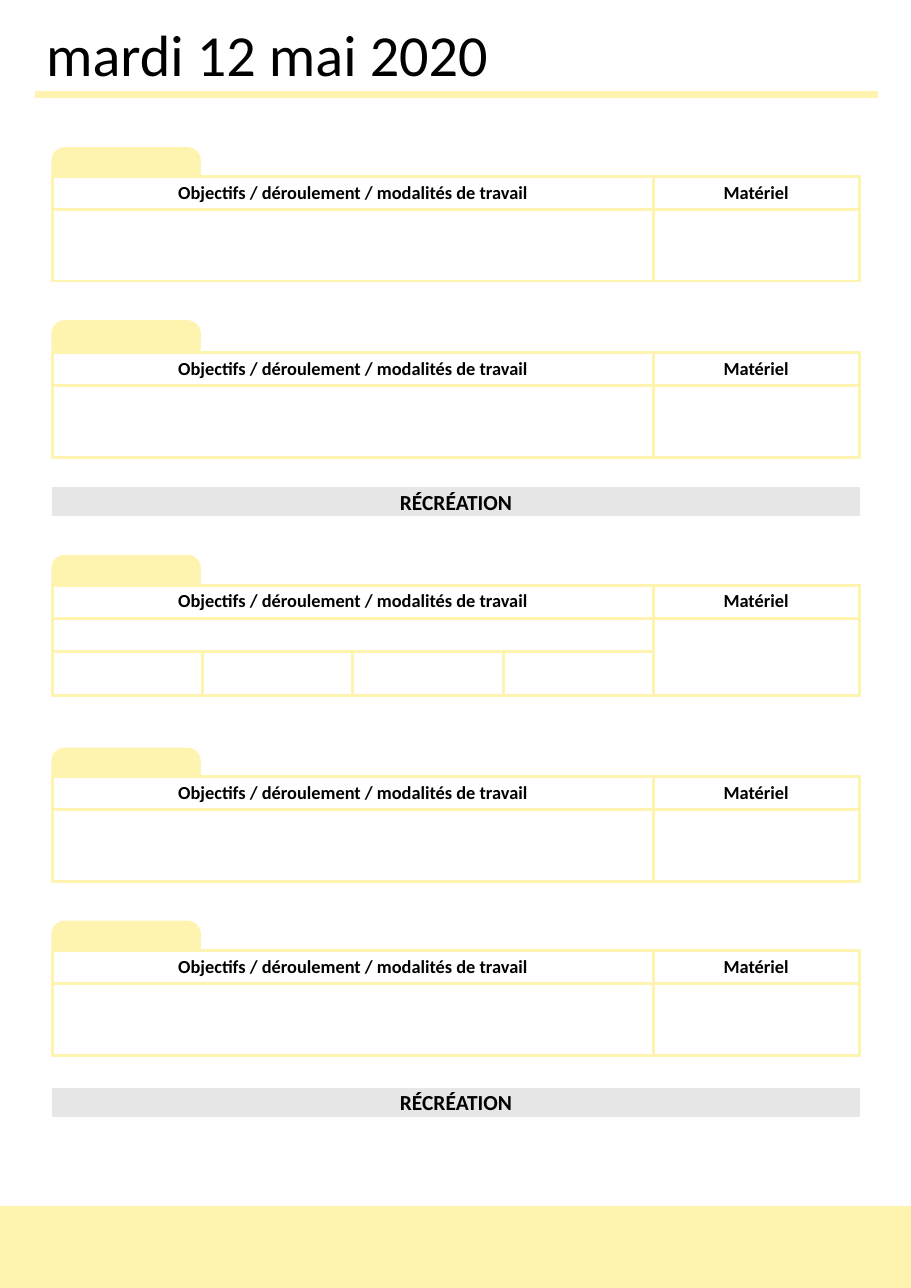
from lxml.etree import SubElement
from pptx import Presentation
from pptx.dml.color import RGBColor
from pptx.enum.shapes import MSO_CONNECTOR, MSO_SHAPE
from pptx.enum.text import MSO_ANCHOR, PP_ALIGN
from pptx.oxml.ns import qn
from pptx.util import Inches, Pt

TITLE = "mardi 12 mai 2020"
HEADS = ("Objectifs / déroulement / modalités de travail", "Matériel")
BREAK = "RÉCRÉATION"
# tab top, table top, row heights, columns under the first heading
LESSONS = [
    (1.35, 1.6, (0.3, 0.65), 1),
    (2.92, 3.2, (0.3, 0.65), 1),
    (5.05, 5.31, (0.3, 0.3, 0.4), 4),
    (6.8, 7.05, (0.3, 0.65), 1),
    (8.37, 8.63, (0.3, 0.65), 1),
]
BREAKS = (4.43, 9.88)

PAGE_W, PAGE_H = 8.27, 11.69
LEFT, WIDE, SIDE = 0.48, 5.45, 1.87
BAR_H, TAB_W, FOOT_H = 0.25, 1.33, 0.74
FONT = "Calibri"
YELLOW = RGBColor(0xFF, 0xF4, 0xAF)
GREY = RGBColor(0xE7, 0xE6, 0xE6)
WHITE = RGBColor(0xFF, 0xFF, 0xFF)
BLACK = RGBColor(0, 0, 0)


def write(frame, text, size=12, bold=True, align=PP_ALIGN.CENTER):
    para = frame.paragraphs[0]
    para.alignment = align
    run = para.add_run()
    run.text = text
    font = run.font
    font.name, font.size, font.bold = FONT, Pt(size), bold
    font.color.rgb = BLACK


def add_box(slide, kind, left, top, width, height, color, line):
    box = slide.shapes.add_shape(
        kind, Inches(left), Inches(top), Inches(width), Inches(height))
    box.shadow.inherit = False
    box.fill.solid()
    box.fill.fore_color.rgb = color
    box.line.color.rgb = color
    box.line.width = Pt(line)
    return box


def style_cell(cell):
    """Give a cell yellow borders, a white fill and 12 pt empty text."""
    props = cell._tc.get_or_add_tcPr()
    for side in ("a:lnL", "a:lnR", "a:lnT", "a:lnB"):
        line = SubElement(props, qn(side), w=str(Pt(2.25)))
        fill = SubElement(line, qn("a:solidFill"))
        SubElement(fill, qn("a:srgbClr"), val=str(YELLOW))
    cell.fill.solid()
    cell.fill.fore_color.rgb = WHITE
    cell.vertical_anchor = MSO_ANCHOR.MIDDLE
    if not cell.text_frame.text:
        para = cell.text_frame.paragraphs[0]._p
        SubElement(para, qn("a:endParaRPr"), sz="1200")


def add_lesson(slide, tab_top, top, rows, parts):
    tab = add_box(slide, MSO_SHAPE.ROUND_2_SAME_RECTANGLE,
                  LEFT, tab_top, TAB_W, BAR_H, YELLOW, 2)
    tab.adjustments[0] = 0.43
    table = slide.shapes.add_table(
        len(rows), parts + 1, Inches(LEFT), Inches(top),
        Inches(WIDE + SIDE), Inches(sum(rows))).table
    table.first_row = table.horz_banding = False
    for row, height in zip(table.rows, rows):
        row.height = Inches(height)
    for col, width in zip(table.columns, [WIDE / parts] * parts + [SIDE]):
        col.width = Inches(width)
    for text, col in zip(HEADS, (0, parts)):
        write(table.cell(0, col).text_frame, text)
    for cell in table.iter_cells():
        style_cell(cell)
    if parts > 1:
        for row in (0, 1):
            table.cell(row, 0).merge(table.cell(row, parts - 1))
        table.cell(1, parts).merge(table.cell(len(rows) - 1, parts))


def main():
    deck = Presentation()
    deck.slide_width, deck.slide_height = Inches(PAGE_W), Inches(PAGE_H)
    slide = deck.slides.add_slide(deck.slide_layouts[6])

    title = slide.shapes.add_textbox(
        Inches(0.32), Inches(0.12), Inches(6.26), Inches(0.74))
    title.text_frame.word_wrap = True
    write(title.text_frame, TITLE, size=38, bold=False, align=PP_ALIGN.LEFT)

    rule = slide.shapes.add_connector(
        MSO_CONNECTOR.STRAIGHT,
        Inches(0.32), Inches(0.86), Inches(7.97), Inches(0.86))
    rule.line.color.rgb = YELLOW
    rule.line.width = Pt(4.75)
    SubElement(rule._element.spPr, qn("a:effectLst"))

    for lesson in LESSONS:
        add_lesson(slide, *lesson)
    for top in BREAKS:
        bar = add_box(slide, MSO_SHAPE.RECTANGLE,
                      LEFT, top, WIDE + SIDE, BAR_H, GREY, 1)
        bar.text_frame.vertical_anchor = MSO_ANCHOR.MIDDLE
        write(bar.text_frame, BREAK, size=14)
    add_box(slide, MSO_SHAPE.RECTANGLE,
            0, PAGE_H - FOOT_H, PAGE_W, FOOT_H, YELLOW, 1)
    deck.save("out.pptx")


if __name__ == "__main__":
    main()
